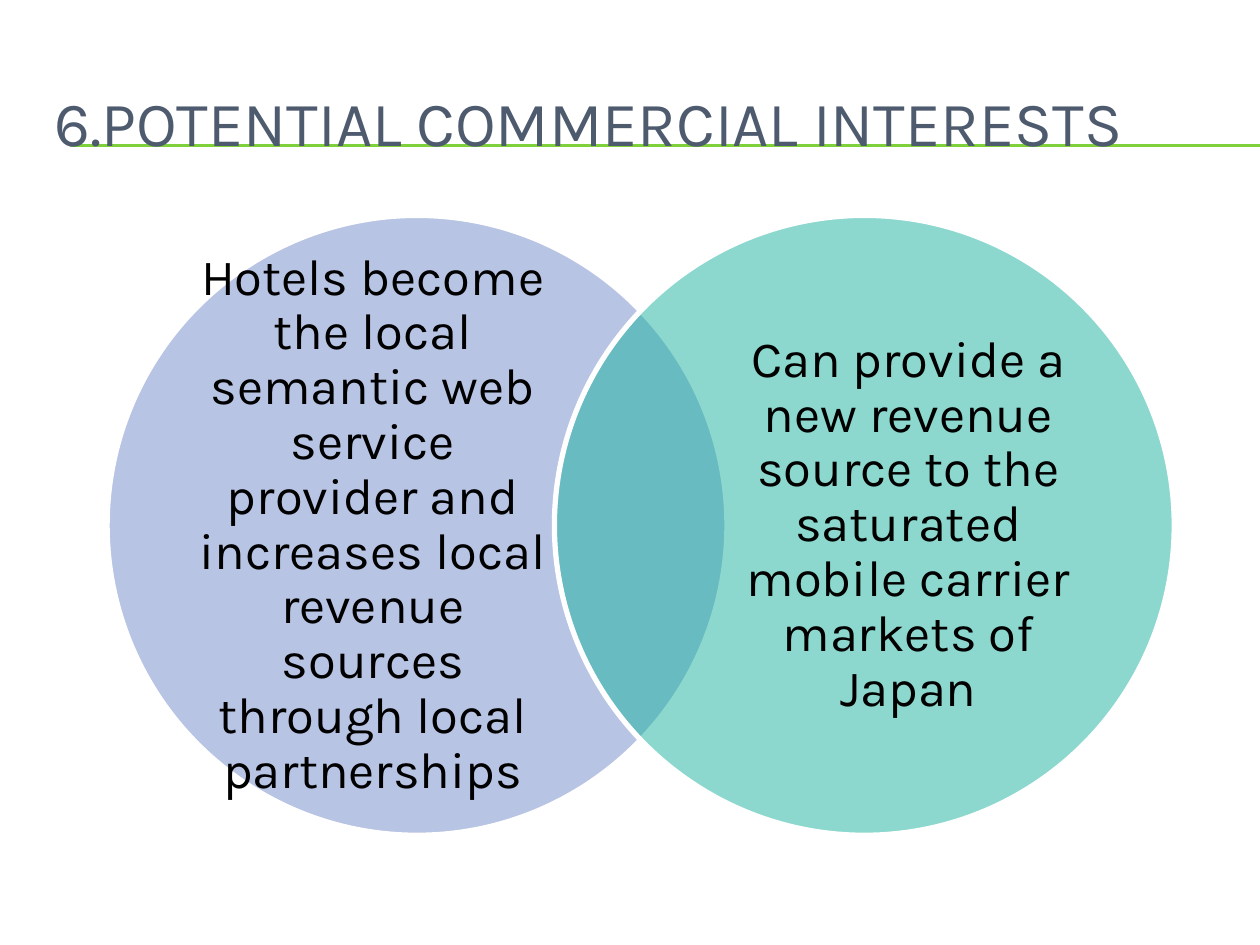
from lxml.etree import SubElement
from pptx import Presentation
from pptx.dml.color import RGBColor
from pptx.enum.shapes import MSO_CONNECTOR as CONN, MSO_SHAPE as SHAPE
from pptx.enum.text import MSO_ANCHOR as ANCHOR, MSO_AUTO_SIZE as FIT, PP_ALIGN as ALIGN
from pptx.oxml.ns import qn
from pptx.util import Pt

TITLE = "6.POTENTIAL COMMERCIAL INTERESTS"
# text, circle colour, circle left, text left
CIRCLES = [
    ("Hotels become the local semantic web service provider and increases "
     "local revenue sources through local partnerships", "738AC8", 61.2, 110.9),
    ("Can provide a new revenue source to the saturated mobile carrier "
     "markets of Japan", "1AB39F", 316.8, 416.9),
]
RULE_TOPS = (82.8, 83.5)
RULE_LEFT, SLIDE_W, SLIDE_H = 40.3, 720, 540
DIAMETER, CENTRE_Y = 354.2, 300.2
TEXT_W, TEXT_H = 204.5, 270.7


def color(hex_code):
    return RGBColor.from_string(hex_code)


def write(shape, text, size, ink, align=ALIGN.LEFT, spacing=None, inset=None):
    tf = shape.text_frame
    tf.word_wrap = True
    tf.auto_size = FIT.NONE
    tf.vertical_anchor = ANCHOR.MIDDLE
    if inset is not None:
        tf.margin_left = tf.margin_right = tf.margin_top = tf.margin_bottom = Pt(inset)
    p = tf.paragraphs[0]
    p.alignment = align
    if spacing:
        p.line_spacing = spacing
    r = p.add_run()
    r.text = text
    r.font.name = "Karla"
    r.font.size = Pt(size)
    r.font.color.rgb = color(ink)


def add_rule(s, top):
    rule = s.shapes.add_connector(CONN.STRAIGHT, Pt(RULE_LEFT), Pt(top), Pt(SLIDE_W), Pt(top))
    rule.line.color.rgb = color("7FD13B")
    rule.line.width = Pt(0.75)
    SubElement(rule._element.spPr, qn("a:effectLst"))


def add_circle(s, left, fill):
    """Half-transparent circle with a white outline."""
    circle = s.shapes.add_shape(SHAPE.OVAL, Pt(left), Pt(CENTRE_Y - DIAMETER / 2),
                                Pt(DIAMETER), Pt(DIAMETER))
    circle.shadow.inherit = False
    circle.fill.solid()
    circle.fill.fore_color.rgb = color(fill)
    fill_color = circle._element.spPr.find(qn("a:solidFill"))[0]
    SubElement(fill_color, qn("a:alpha"), val="50000")
    circle.line.color.rgb = color("FFFFFF")
    circle.line.width = Pt(3)


prs = Presentation()
prs.slide_width, prs.slide_height = Pt(SLIDE_W), Pt(SLIDE_H)
s = prs.slides.add_slide(prs.slide_layouts[5])

title = s.shapes.title
title.left, title.top, title.width, title.height = Pt(23.8), Pt(36), Pt(684), Pt(66.2)
write(title, TITLE, 36, "4E5B6F")

for top in RULE_TOPS:
    add_rule(s, top)
# The title sits in front of the rules
s.shapes._spTree.append(title._element)

for text, fill, left, text_left in CIRCLES:
    add_circle(s, left, fill)
    box = s.shapes.add_textbox(Pt(text_left), Pt(CENTRE_Y - TEXT_H / 2), Pt(TEXT_W), Pt(TEXT_H))
    write(box, text, 29, "000000", align=ALIGN.CENTER, spacing=0.9, inset=0)

prs.save("out.pptx")
